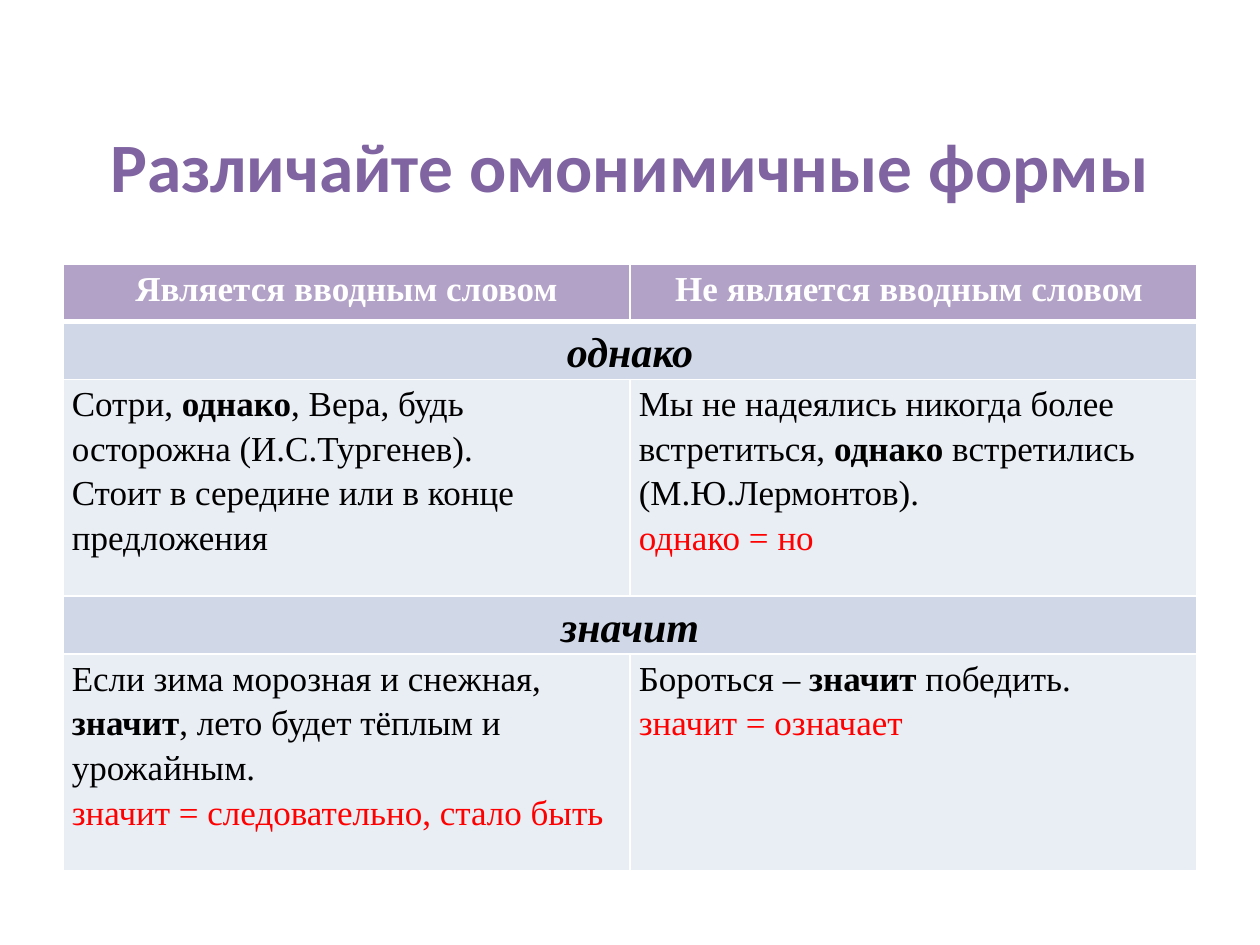
from dataclasses import dataclass
from lxml import etree
from pptx import Presentation
from pptx.dml.color import RGBColor
from pptx.enum.text import MSO_ANCHOR, PP_ALIGN
from pptx.oxml.ns import qn
from pptx.util import Inches, Pt

LEFT, CENTER = PP_ALIGN.LEFT, PP_ALIGN.CENTER
TOP, MIDDLE = MSO_ANCHOR.TOP, MSO_ANCHOR.MIDDLE


@dataclass(frozen=True)
class Theme:
    head: str = "Calibri"
    body: str = "Times New Roman"
    title: str = "8064A2"
    bar: str = "B3A2C7"
    band: str = "D0D8E8"
    pale: str = "E9EDF4"
    white: str = "FFFFFF"
    black: str = "000000"
    red: str = "FF0000"
    big: float = 39.6
    mid: float = 24
    small: float = 20


class Deck:
    """Draws styled elements on the current slide."""

    def __init__(self, theme):
        self.theme = theme
        self.show = Presentation()
        self.show.slide_width, self.show.slide_height = Inches(10), Inches(7.5)
        self.slide = self.show.slides.add_slide(self.show.slide_layouts[6])

    def style(self, run, face, size, color, bold=False, italic=False):
        font = run.font
        font.name, font.size = face, Pt(size)
        font.bold, font.italic = bold, italic
        font.color.rgb = RGBColor.from_string(color)

    def title(self, text, left, top, width, height):
        box = self.slide.shapes.add_textbox(
            Inches(left), Inches(top), Inches(width), Inches(height))
        frame = box.text_frame
        frame.word_wrap = True
        frame.vertical_anchor = MIDDLE
        frame.text = text
        para = frame.paragraphs[0]
        para.alignment = CENTER
        self.style(para.runs[0], self.theme.head, self.theme.big,
                   self.theme.title, bold=True)

    def table(self, left, top, widths, heights):
        shape = self.slide.shapes.add_table(
            len(heights), len(widths), Inches(left), Inches(top),
            Inches(sum(widths)), Inches(sum(heights)))
        grid = shape.table
        for col, width in zip(grid.columns, widths):
            col.width = Inches(width)
        for row, height in zip(grid.rows, heights):
            row.height = Inches(height)
        return grid

    def edge(self, cell, side, width):
        line = etree.SubElement(cell._tc.get_or_add_tcPr(), qn(f"a:ln{side}"),
                                w=str(Pt(width)))
        fill = etree.SubElement(line, qn("a:solidFill"))
        etree.SubElement(fill, qn("a:srgbClr"), val=self.theme.white)

    def box(self, cell, fill, anchor=TOP, top=1, base=1):
        for side, width in zip("LRTB", (1, 1, top, base)):
            self.edge(cell, side, width)
        cell.fill.solid()
        cell.fill.fore_color.rgb = RGBColor.from_string(fill)
        cell.margin_left = cell.margin_right = Inches(0.07)
        cell.margin_top = cell.margin_bottom = 0
        cell.vertical_anchor = anchor

    def label(self, cell, text, size, color, italic=False):
        cell.text_frame.text = text
        para = cell.text_frame.paragraphs[0]
        para.alignment, para.line_spacing = CENTER, 1.15
        self.style(para.runs[0], self.theme.body, size, color, True, italic)

    def prose(self, cell, lines):
        theme, frame = self.theme, cell.text_frame
        for pos, (text, color) in enumerate(lines):
            para = frame.add_paragraph() if pos else frame.paragraphs[0]
            para.alignment, para.line_spacing = LEFT, 1.15
            for part, words in enumerate(text.split("*")):
                run = para.add_run()
                run.text = words
                self.style(run, theme.body, theme.small, color, part % 2 == 1)


def main():
    theme = Theme()
    deck = Deck(theme)
    deck.title("Различайте омонимичные формы", 0.5, 0.76, 9, 1.1)

    heads = ["Является вводным словом", "Не является вводным словом "]
    black, red = theme.black, theme.red
    groups = [
        ("однако",
         [("Сотри, *однако*, Вера, будь осторожна (И.С.Тургенев).", black),
          ("Стоит в середине или в конце предложения", black)],
         [("Мы не надеялись никогда более встретиться, *однако* встретились "
           "(М.Ю.Лермонтов).", black),
          ("однако = но", red)]),
        ("значит",
         [("Если зима морозная и снежная, *значит*, лето будет тёплым и "
           "урожайным.", black),
          ("значит = следовательно, стало быть", red)],
         [("Бороться – *значит* победить.", black),
          ("значит = означает", red)]),
    ]
    grid = deck.table(0.5, 2.1, [4.5] * 2, [0.45] + [0.45, 1.72] * len(groups))
    for col, text in enumerate(heads):
        cell = grid.cell(0, col)
        deck.box(cell, theme.bar, base=3)
        deck.label(cell, text, theme.small, theme.white)
    for pos, (word, *sides) in enumerate(groups):
        row = 1 + 2 * pos
        for col, lines in enumerate(sides):
            deck.box(grid.cell(row, col), theme.band, MIDDLE,
                     top=1 if pos else 3)
            deck.box(grid.cell(row + 1, col), theme.pale)
            deck.prose(grid.cell(row + 1, col), lines)
        band = grid.cell(row, 0)
        band.merge(grid.cell(row, 1))
        deck.label(band, word, theme.mid, black, italic=True)
    deck.show.save("out.pptx")


if __name__ == "__main__":
    main()
